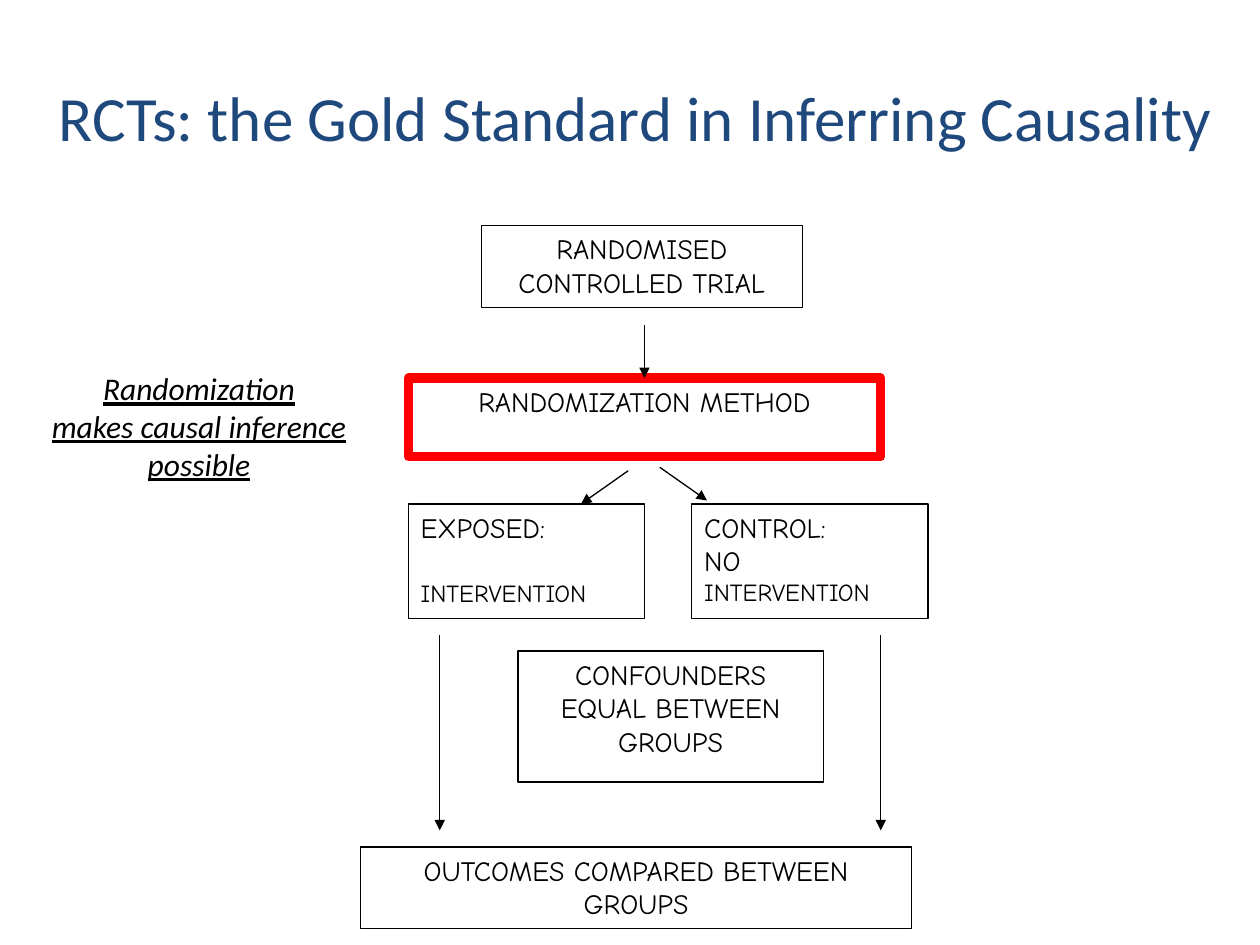
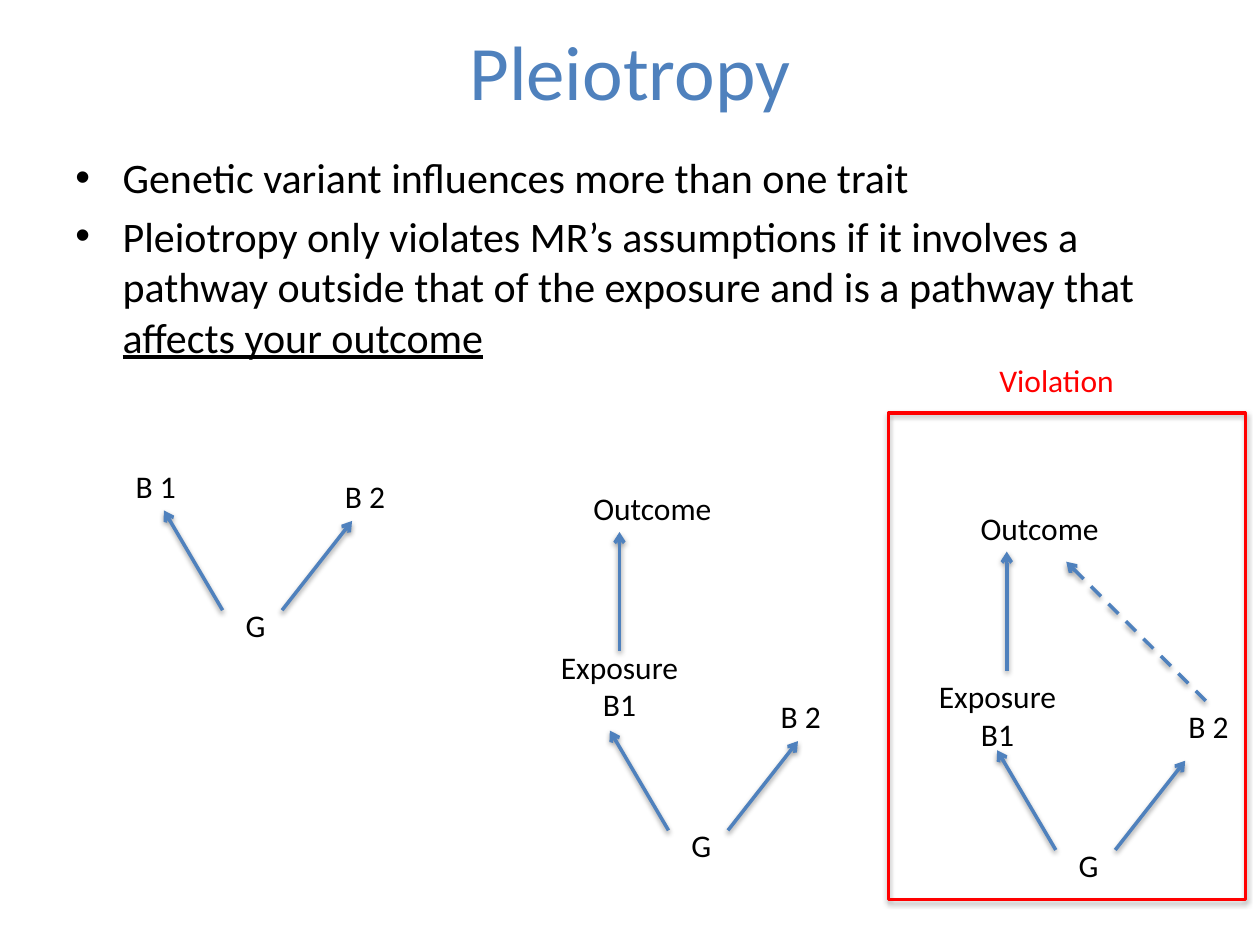
from lxml.etree import SubElement
from pptx import Presentation
from pptx.dml.color import RGBColor
from pptx.enum.dml import MSO_LINE
from pptx.enum.shapes import MSO_CONNECTOR, MSO_SHAPE
from pptx.enum.text import MSO_ANCHOR, MSO_AUTO_SIZE, PP_ALIGN
from pptx.oxml.ns import qn
from pptx.util import Pt

BLACK, WHITE, RED = "000000", "FFFFFF", "FF0000"
NAVY, BLUE = "1F497D", "4F81BD"
CENTER = {"alignment": PP_ALIGN.CENTER}
LEFT = {"alignment": PP_ALIGN.LEFT}
LABEL = {"name": "Calibri", "size": Pt(18)}
BOX_FONT = {"name": "Comic Neue", "size": Pt(16)}
SMALL = {"size": Pt(14)}


def color(hex_string):
    return RGBColor.from_string(hex_string)


def apply_format(target, values):
    for name, value in values.items():
        setattr(target, name, value)


def write_text(shape, paragraphs, font, font_color=BLACK, layout=LEFT):
    frame = shape.text_frame
    for index, runs in enumerate(paragraphs):
        paragraph = frame.paragraphs[0] if index == 0 else frame.add_paragraph()
        apply_format(paragraph, layout)
        for text, changes in [(runs, {})] if isinstance(runs, str) else runs:
            run = paragraph.add_run()
            run.text = text
            apply_format(run.font, {**font, **changes})
            run.font.color.rgb = color(font_color)
    return frame


def add_text(slide, bounds, paragraphs, font=LABEL, font_color=BLACK,
             layout=LEFT, **frame_format):
    shape = slide.shapes.add_textbox(*map(Pt, bounds))
    apply_format(shape.text_frame, {"word_wrap": True, **frame_format})
    return write_text(shape, paragraphs, font, font_color, layout)


def add_label(slide, left, top, width, *lines, wrap=True, **options):
    add_text(slide, (left, top, width, 7 + 22 * len(lines)), lines,
             word_wrap=wrap, auto_size=MSO_AUTO_SIZE.SHAPE_TO_FIT_TEXT, **options)


def add_title(slide, bounds, text, size, font_color):
    add_text(slide, bounds, [text], {"name": "Calibri", "size": Pt(size)},
             font_color, CENTER, vertical_anchor=MSO_ANCHOR.MIDDLE)


def add_bullets(slide, bounds, paragraphs):
    frame = add_text(slide, bounds, paragraphs, {"name": "Calibri", "size": Pt(24)},
                     layout={"space_before": Pt(4.8)})
    for paragraph in frame.paragraphs:
        properties = paragraph._p.get_or_add_pPr()
        properties.set("marL", str(Pt(27)))
        properties.set("indent", str(Pt(-27)))
        SubElement(properties, qn("a:buFont"), typeface="Arial")
        SubElement(properties, qn("a:buChar"), char="•")


def add_shadow(effects, opacity):
    shadow = SubElement(effects, qn("a:outerShdw"), blurRad=str(Pt(3.1)),
                        dist=str(Pt(1.6)), dir="5400000", rotWithShape="0")
    shade = SubElement(shadow, qn("a:srgbClr"), val=BLACK)
    SubElement(shade, qn("a:alpha"), val=str(opacity * 1000))


def add_box(slide, bounds, paragraphs=(), line_color=BLACK, width=0.75,
            fill=WHITE, layout=CENTER):
    shape = slide.shapes.add_shape(MSO_SHAPE.RECTANGLE, *map(Pt, bounds))
    shape.shadow.inherit = False
    if fill:
        shape.fill.solid()
        shape.fill.fore_color.rgb = color(fill)
    else:
        shape.fill.background()
    shape.line.color.rgb = color(line_color)
    shape.line.width = Pt(width)
    shape.text_frame.vertical_anchor = MSO_ANCHOR.TOP
    write_text(shape, paragraphs, BOX_FONT, layout=layout)
    return shape


def add_arrow(slide, start, end, line_color=BLACK, width=0.75, head="triangle",
              dash=None, shadow=False):
    connector = slide.shapes.add_connector(
        MSO_CONNECTOR.STRAIGHT, *map(Pt, (*start, *end)))
    connector.line.color.rgb = color(line_color)
    connector.line.width = Pt(width)
    if dash:
        connector.line.dash_style = dash
    properties = connector._element.spPr
    SubElement(properties.find(qn("a:ln")), qn("a:tailEnd"), type=head)
    effects = SubElement(properties, qn("a:effectLst"))
    if shadow:
        add_shadow(effects, 38)
    return connector


def add_path(slide, start, end, dash=None):
    add_arrow(slide, start, end, BLUE, 2, "arrow", dash, True)


def add_gene_fork(slide, x, y):
    add_label(slide, x, y, 26, "G", wrap=False)
    add_path(slide, (x - 6, y + 6), (x - 39.5, y - 51))
    add_path(slide, (x + 28, y + 6), (x + 68, y - 45))


def add_outcome_graph(slide, x, y, exposure, second_trait):
    add_gene_fork(slide, x, y)
    add_label(slide, *exposure, 113, "Exposure", "B1", layout=CENTER)
    add_label(slide, *second_trait, 51, "B 2")
    add_path(slide, (x - 34, y - 96.5), (x - 34, y - 164.5))
    add_label(slide, x - 56, y - 192.5, 102, "Outcome")


def build_trial_slide(slide):
    add_title(slide, (20, 21.5, 686, 90),
              "RCTs: the Gold Standard in Inferring Causality", 36, NAVY)
    method = add_box(slide, (233.3, 216, 270, 45), ["RANDOMIZATION METHOD"], RED, 5.25)
    add_box(slide, (275, 129, 183.5, 46.8), ["RANDOMISED CONTROLLED TRIAL"])
    add_box(slide, (296, 372, 174.5, 75), ["CONFOUNDERS EQUAL BETWEEN GROUPS"])
    exposed = add_box(slide, (233.3, 288, 135, 65.5),
                      ["EXPOSED:", [("INTERVENTION", SMALL)]], layout=LEFT)
    exposed.text_frame.paragraphs[1].space_before = Pt(19.4)
    add_box(slide, (395.3, 288, 135, 65.5),
            ["CONTROL:", [("NO ", {}), ("INTERVENTION", SMALL)]], layout=LEFT)
    add_box(slide, (206, 484, 315, 46.8), ["OUTCOMES COMPARED BETWEEN GROUPS"])

    add_arrow(slide, (368.3, 186), (368.3, 216)).end_connect(method, 0)
    add_arrow(slide, (359, 269), (332, 288))
    add_arrow(slide, (377, 267), (404, 286))
    for x in (251.3, 503.3):
        add_arrow(slide, (x, 363), (x, 474.5))
    add_label(slide, 18.7, 207.4, 190, "Randomization", "makes causal inference",
              "possible", wrap=False, layout=CENTER,
              font={**LABEL, "italic": True, "underline": True})


def build_pleiotropy_slide(slide):
    add_title(slide, (36, 3.6, 648, 73), "Pleiotropy", 44, BLUE)
    add_bullets(slide, (36, 83, 648, 400), [
        "Genetic variant influences more than one trait",
        [("Pleiotropy only violates MR’s assumptions if it involves a pathway "
          "outside that of the exposure and is a pathway that ", {}),
         ("affects your outcome", {"underline": True})],
    ])
    add_gene_fork(slide, 133.2, 342.7)
    add_label(slide, 70.5, 263.5, 113, "B 1")
    add_label(slide, 190, 269.3, 113, "B 2")
    add_outcome_graph(slide, 388, 468.5, (297.5, 366.5), (439, 394.5))
    add_outcome_graph(slide, 609.3, 479.7, (513.5, 383.3), (672, 400.3))
    add_path(slide, (689, 400.5), (609.3, 321), MSO_LINE.DASH)
    violation = add_box(slide, (507.6, 236, 204, 278), line_color=RED,
                        width=1.75, fill=None)
    add_shadow(violation._element.spPr.find(qn("a:effectLst")), 35)
    add_label(slide, 564, 202.5, 80.5, "Violation", wrap=False, font_color=RED)


def main():
    presentation = Presentation()
    presentation.slide_width, presentation.slide_height = Pt(720), Pt(540)
    for build_slide in (build_trial_slide, build_pleiotropy_slide):
        build_slide(presentation.slides.add_slide(presentation.slide_layouts[6]))
    presentation.save("out.pptx")


if __name__ == "__main__":
    main()
